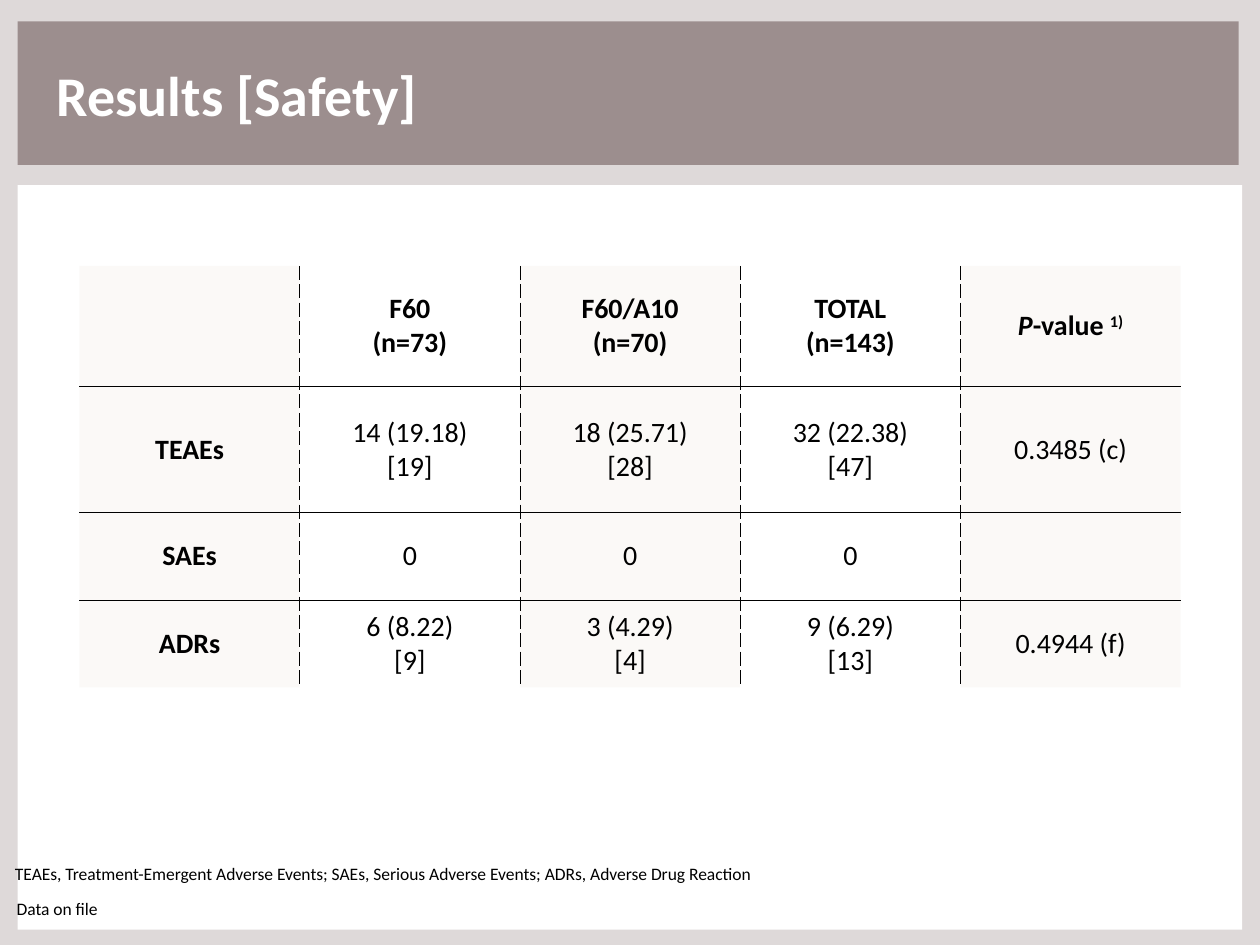
import pptx
import pptx.util
import pptx.dml.color
import pptx.enum.shapes
import pptx.enum.text
import pptx.oxml
import pptx.oxml.ns

Pt = pptx.util.Pt
ALIGN = pptx.enum.text.PP_ALIGN
ANCHOR = pptx.enum.text.MSO_ANCHOR

# Content
HEADING = "Results [Safety]"
ROWS = [
    ["", "F60\n(n=73)", "F60/A10\n(n=70)", "TOTAL\n(n=143)", "P-value 1)"],
    ["TEAEs", "14 (19.18)\n[19]", "18 (25.71)\n[28]", "32 (22.38)\n[47]", "0.3485 (c)"],
    ["SAEs", "0", "0", "0", ""],
    ["ADRs", "6 (8.22)\n[9]", "3 (4.29)\n[4]", "9 (6.29)\n[13]", "0.4944 (f)"],
]
# Runs of the one header that mixes styles: text, font values, baseline
P_VALUE = "P-value 1)"
P_VALUE_RUNS = [("P", {"italic": True}, 0), ("-value ", {}, 0), ("1)", {}, 30000)]
FOOTNOTES = [
    ("TEAEs, Treatment-Emergent Adverse Events; SAEs, Serious Adverse Events; "
     "ADRs, Adverse Drug Reaction", (8.6, 493.2, 429, 12.2), 0),
    ("Data on file", (8.6, 513.4, 48.5, 12.2), 0.9),
]

# Format
COLORS = {"backdrop": "DED9D9", "band": "9C8E8E", "paper": "FFFFFF",
          "tint": "D8C7B5", "ink": "000000", "heading": "FFFFFF"}
PANELS = [("band", (10.1, 12.2, 697.7, 82.1)), ("paper", (10.1, 105.8, 699.8, 425.5))]
HEADING_BOX = (25.2, 31, 222.5, 46)
TABLE_LEFT, TABLE_TOP, COLUMN_WIDTH = 45.4, 151.9, 125.86
ROW_HEIGHTS = [69, 72, 50, 50]
TINT_ALPHA = 10000
RULE_WIDTH = 0.5
HEADING_FONT = {"name": "Calibri", "size": Pt(32), "bold": True}
CELL_FONT = {"name": "Calibri", "size": Pt(16)}
NOTE_FONT = {"name": "Calibri", "size": Pt(10)}


def rgb(role):
    return pptx.dml.color.RGBColor.from_string(COLORS[role])


def style(font, values, role="ink"):
    for key, value in values.items():
        setattr(font, key, value)
    font.color.rgb = rgb(role)


def points(box):
    return [Pt(value) for value in box]


def set_frame(frame, margin=None, **values):
    for key, value in values.items():
        setattr(frame, key, value)
    if margin is not None:
        for side in ("left", "top", "right", "bottom"):
            setattr(frame, "margin_" + side, Pt(margin))


def border_xml(side, dash):
    """Inner edges get a line; a dash of None hides an outer edge."""
    if dash is None:
        body = "<a:noFill/>"
    else:
        body = (f'<a:solidFill><a:srgbClr val="{COLORS["ink"]}"/></a:solidFill>'
                f'<a:prstDash val="{dash}"/>')
    return pptx.oxml.parse_xml(
        f'<a:ln{side} {pptx.oxml.ns.nsdecls("a")} w="{Pt(RULE_WIDTH)}">{body}</a:ln{side}>')


def fill_cell(cell, row, column):
    text = ROWS[row][column]
    last_row, last_column = len(ROWS) - 1, len(ROWS[0]) - 1
    cell.vertical_anchor = ANCHOR.MIDDLE

    # Every other column is tinted
    if column % 2 == 0:
        cell.fill.solid()
        cell.fill.fore_color.rgb = rgb("tint")
    else:
        cell.fill.background()
    properties = cell._tc.get_or_add_tcPr()
    for color in properties.iter(pptx.oxml.ns.qn("a:srgbClr")):
        color.append(pptx.oxml.parse_xml(
            f'<a:alpha {pptx.oxml.ns.nsdecls("a")} val="{TINT_ALPHA}"/>'))

    # Dashed lines between columns, solid lines between rows
    edges = [("L", "dash" if column > 0 else None),
             ("R", "dash" if column < last_column else None),
             ("T", "solid" if row > 0 else None),
             ("B", "solid" if row < last_row else None)]
    for position, (side, dash) in enumerate(edges):
        properties.insert(position, border_xml(side, dash))

    # Header row and first column are bold
    weight = {"bold": row == 0 or column == 0}
    for index, line in enumerate(text.split("\n")):
        frame = cell.text_frame
        paragraph = frame.paragraphs[0] if index == 0 else frame.add_paragraph()
        paragraph.alignment = ALIGN.CENTER
        parts = P_VALUE_RUNS if line == P_VALUE else [(line, {}, 0)]
        for words, extra, baseline in parts if line else []:
            run = paragraph.add_run()
            run.text = words
            style(run.font, {**CELL_FONT, **weight, **extra})
            if baseline:
                run.font._element.set("baseline", str(baseline))


deck = pptx.Presentation()
deck.slide_width, deck.slide_height = Pt(720), Pt(540)
slide = deck.slides.add_slide(deck.slide_layouts[5])
slide.background.fill.solid()
slide.background.fill.fore_color.rgb = rgb("backdrop")

# Heading band and white page
for role, box in PANELS:
    panel = slide.shapes.add_shape(pptx.enum.shapes.MSO_SHAPE.RECTANGLE, *points(box))
    panel.shadow.inherit = False
    panel.fill.solid()
    panel.fill.fore_color.rgb = rgb(role)
    panel.line.fill.background()

# Heading, brought in front of its band
heading = slide.shapes.title
heading.left, heading.top, heading.width, heading.height = points(HEADING_BOX)
slide.shapes._spTree.append(heading._element)
heading.text_frame.text = HEADING
set_frame(heading.text_frame, word_wrap=False, vertical_anchor=ANCHOR.MIDDLE,
          auto_size=pptx.enum.text.MSO_AUTO_SIZE.NONE)
heading.text_frame.paragraphs[0].alignment = ALIGN.LEFT
style(heading.text_frame.paragraphs[0].runs[0].font, HEADING_FONT, "heading")

# Safety table
column_count = len(ROWS[0])
safety = slide.shapes.add_table(
    len(ROWS), column_count,
    *points((TABLE_LEFT, TABLE_TOP, COLUMN_WIDTH * column_count, sum(ROW_HEIGHTS)))).table
safety.first_row = safety.horz_banding = False
for column in safety.columns:
    column.width = Pt(COLUMN_WIDTH)
for row, height in enumerate(ROW_HEIGHTS):
    safety.rows[row].height = Pt(height)
    for column in range(column_count):
        fill_cell(safety.cell(row, column), row, column)

# Footnotes
for words, box, indent in FOOTNOTES:
    note = slide.shapes.add_textbox(*points(box)).text_frame
    set_frame(note, margin=0, word_wrap=False)
    note.text = words
    paragraph = note.paragraphs[0]
    paragraph.alignment = ALIGN.LEFT
    paragraph._p.get_or_add_pPr().set("marL", str(Pt(indent)))
    style(paragraph.runs[0].font, NOTE_FONT)

deck.save("out.pptx")
